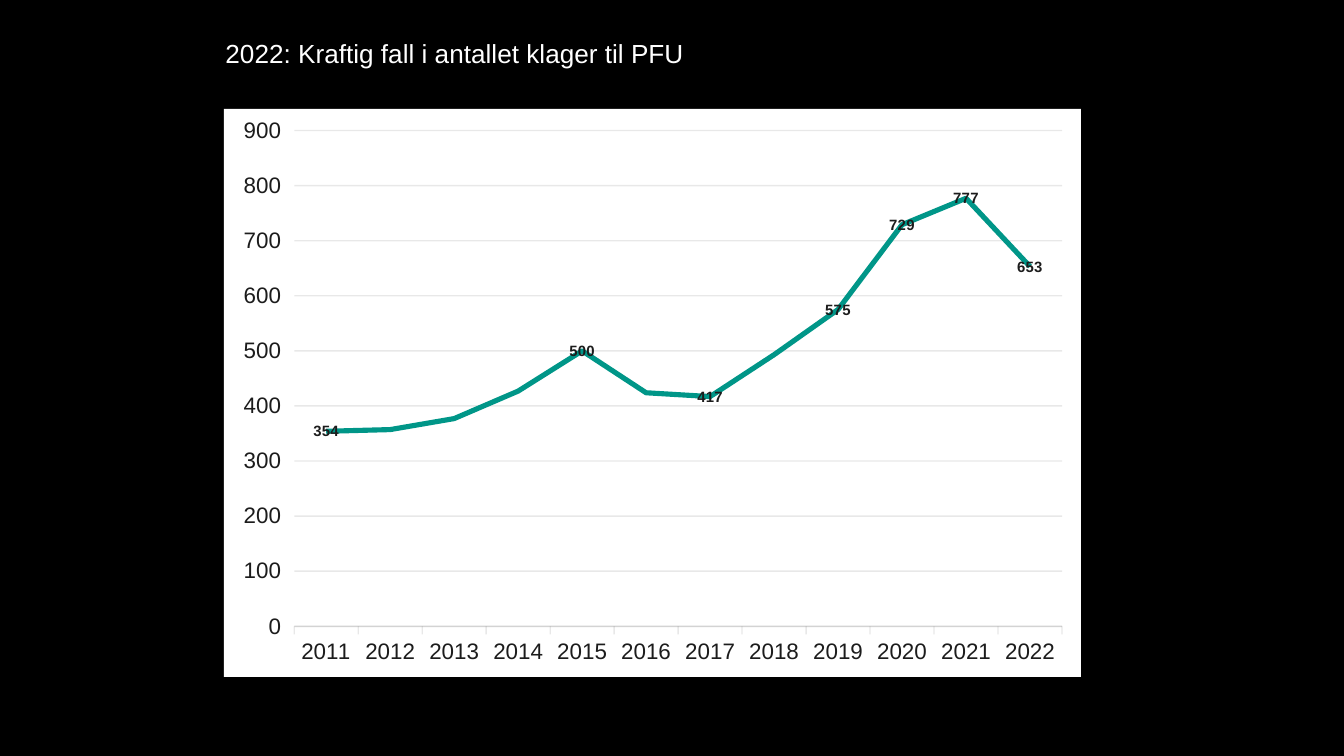
from pptx import Presentation
from pptx import util as u
from pptx.chart.data import CategoryChartData
from pptx.dml.color import RGBColor
from pptx.enum import chart as ch, text as t
from pptx.oxml import parse_xml
from pptx.oxml.ns import nsdecls, qn

SCALE = 914400 / 134.4  # EMU in one px
BLACK = RGBColor(0x00, 0x00, 0x00)
WHITE = RGBColor(0xFF, 0xFF, 0xFF)
INK = RGBColor(0x1C, 0x1C, 0x1C)
RULE = RGBColor(0x1F, 0x1F, 0x1F)
TEAL = RGBColor(0x00, 0x96, 0x88)
FONT = "Arial"

YEARS = [str(year) for year in range(2011, 2023)]
CASES = [354, 357, 377, 427, 500, 424, 417, 493, 575, 729, 777, 653]
SHOWN = {"2011", "2015", "2017", "2019", "2020", "2021", "2022"}


def px(n):
    return u.Emu(round(n * SCALE))


def style(font, size, color, bold=False):
    font.name, font.size, font.bold = FONT, u.Pt(size), bold
    font.color.rgb = color


def write(shape, words, size=14, color=WHITE, align=t.PP_ALIGN.LEFT):
    frame = shape.text_frame
    frame.word_wrap = True
    frame.auto_size = t.MSO_AUTO_SIZE.NONE
    frame.vertical_anchor = t.MSO_ANCHOR.MIDDLE
    para = frame.paragraphs[0]
    para.alignment = align
    run = para.add_run()
    run.text = words
    style(run.font, size, color)


def add_title(slide, words, x, y, w, h):
    title = slide.shapes.title
    title.left, title.top, title.width, title.height = map(px, (x, y, w, h))
    write(title, words)


def faint(line):
    """Thin rule at ten percent opacity."""
    line.width = u.Pt(0.75)
    line.color.rgb = RULE
    tint = line.fill._xPr.find(".//" + qn("a:srgbClr"))
    tint.append(parse_xml(f'<a:alpha {nsdecls("a")} val="10000"/>'))


def set_axes(chart):
    for axis in (chart.category_axis, chart.value_axis):
        style(axis.tick_labels.font, 12, INK)
        axis.major_tick_mark = ch.XL_TICK_MARK.OUTSIDE
        axis.minor_tick_mark = ch.XL_TICK_MARK.NONE
    faint(chart.category_axis.format.line)
    axis = chart.value_axis
    axis.format.line.fill.background()
    axis.minimum_scale, axis.maximum_scale, axis.major_unit = 0, 900, 100
    axis.has_major_gridlines = True
    faint(axis.major_gridlines.format.line)


def set_labels(series):
    labels = series.data_labels
    labels.show_value = True
    labels.position = ch.XL_LABEL_POSITION.CENTER
    style(labels.font, 8, INK, bold=True)
    hidden = [i for i, year in enumerate(YEARS) if year not in SHOWN]
    for spot, i in enumerate(hidden):
        labels._element.insert(spot, parse_xml(
            f'<c:dLbl {nsdecls("c")}><c:idx val="{i}"/>'
            '<c:delete val="1"/></c:dLbl>'))


def set_frame(chart, x, y, w, h):
    """White chart area and a fixed inner plot area."""
    space = chart._chartSpace
    space.find(qn("c:chart")).addnext(parse_xml(
        f'<c:spPr {nsdecls("c", "a")}><a:solidFill><a:srgbClr val="{WHITE}"/>'
        '</a:solidFill><a:ln><a:noFill/></a:ln></c:spPr>'))
    area = space.find(".//" + qn("c:plotArea"))
    for old in area.findall(qn("c:layout")):
        area.remove(old)
    modes = '<c:xMode val="edge"/><c:yMode val="edge"/>'
    sizes = "".join(f'<c:{key} val="{val}"/>'
                    for key, val in zip("xywh", (x, y, w, h)))
    area.insert(0, parse_xml(
        f'<c:layout {nsdecls("c")}><c:manualLayout>'
        f'<c:layoutTarget val="inner"/>{modes}{sizes}'
        '</c:manualLayout></c:layout>'))


def add_graph(slide, x, y, w, h):
    data = CategoryChartData()
    data.categories = YEARS
    data.add_series("Series 1", CASES)
    chart = slide.shapes.add_chart(
        ch.XL_CHART_TYPE.LINE_STACKED, *map(px, (x, y, w, h)), data).chart
    style(chart.font, 10, WHITE)
    chart.has_title = chart.has_legend = False
    plot = chart.plots[0]
    plot.vary_by_categories = False
    series = plot.series[0]
    series.smooth = False
    series.marker.style = ch.XL_MARKER_STYLE.NONE
    series.format.line.width = u.Pt(2.75)
    series.format.line.color.rgb = TEAL
    set_labels(series)
    set_axes(chart)
    set_frame(chart, 0.082, 0.038, 0.896, 0.873)


def main():
    deck = Presentation()
    deck.slide_width, deck.slide_height = px(1344), px(756)
    slide = deck.slides.add_slide(deck.slide_layouts[5])
    fill = slide.background.fill
    fill.solid()
    fill.fore_color.rgb = BLACK

    # Line graph of complaints a year
    add_graph(slide, 224, 109, 857, 568)
    # Heading
    add_title(slide, "2022: Kraftig fall i antallet klager til PFU",
              212, 30, 616, 46)
    deck.save("out.pptx")


if __name__ == "__main__":
    main()
